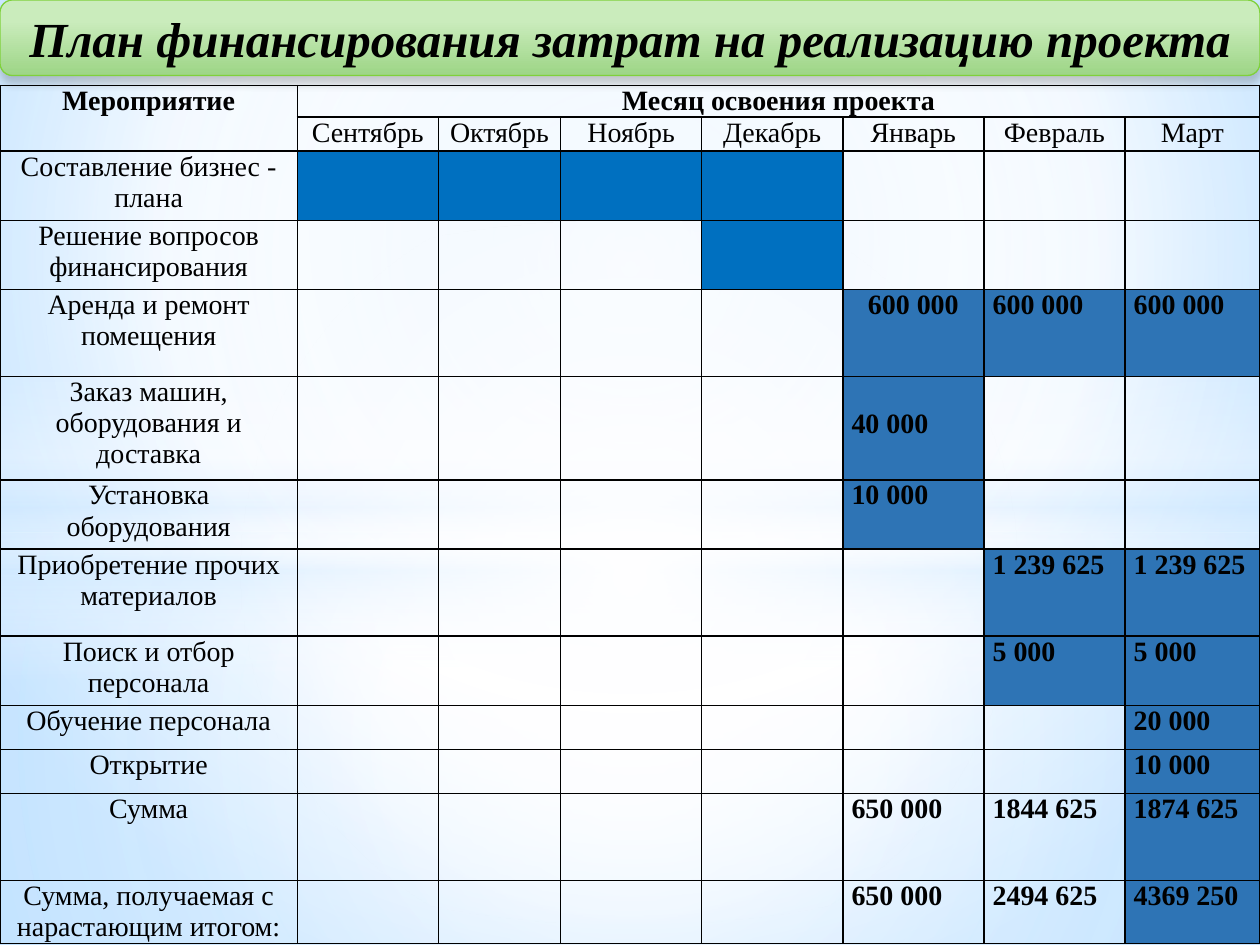
from lxml import etree
from pptx import Presentation
from pptx.dml.color import RGBColor
from pptx.enum.shapes import MSO_SHAPE as Shape
from pptx.enum.text import MSO_ANCHOR as Anchor, PP_ALIGN as Align
from pptx.oxml import parse_xml
from pptx.oxml.ns import nsdecls, qn
from pptx.util import Inches, Pt

FONT = "Times New Roman"
BLACK = RGBColor(0x00, 0x00, 0x00)
WHITE = RGBColor(0xFF, 0xFF, 0xFF)
PALE = RGBColor(0xD6, 0xEC, 0xFF)
SKY = RGBColor(0xC2, 0xE3, 0xFF)
AZURE = RGBColor(0x79, 0xC1, 0xFF)
LIME = RGBColor(0xCA, 0xEC, 0xBC)
GREEN = RGBColor(0x9D, 0xD5, 0x86)
EDGE = RGBColor(0x7F, 0xD1, 0x3B)
BLUE = RGBColor(0x00, 0x70, 0xC0)
STEEL = RGBColor(0x2E, 0x74, 0xB5)

COLS = [2.36, 1.12, 0.97, 1.12, 1.12, 1.12, 1.12, 1.07]
HEADS = [0.25, 0.27]
MONTHS = ["Сентябрь", "Октябрь", "Ноябрь", "Декабрь", "Январь", "Февраль", "Март"]
TASKS = [
    ("Составление бизнес - плана", 0.55, {}),
    ("Решение вопросов финансирования", 0.55, {}),
    ("Аренда и ремонт помещения", 0.69, {5: "600 000", 6: "600 000", 7: "600 000"}),
    ("Заказ машин, оборудования и доставка", 0.82, {5: "40 000"}),
    ("Установка оборудования", 0.55, {5: "10 000"}),
    ("Приобретение прочих материалов", 0.69, {6: "1 239 625", 7: "1 239 625"}),
    ("Поиск и отбор персонала", 0.55, {6: "5 000", 7: "5 000"}),
    ("Обучение персонала", 0.35, {7: "20 000"}),
    ("Открытие", 0.35, {7: "10 000"}),
    ("Сумма", 0.69, {5: "650 000", 6: "1844 625", 7: "1874 625"}),
    ("Сумма, получаемая с нарастающим итогом:", 0.5,
     {5: "650 000", 6: "2494 625", 7: "4369 250"}),
]
PLANNED = {(2, 1), (2, 2), (2, 3), (2, 4), (3, 4)}
TOTALS = {"Сумма", "Сумма, получаемая с нарастающим итогом:"}


def blend(props, stops, focus=None):
    """Replace the solid fill in props by a radial or top-down gradient."""
    marks = "".join(
        f'<a:gs pos="{pos * 1000}"><a:srgbClr val="{color}">'
        f'<a:alpha val="{alpha * 1000}"/></a:srgbClr></a:gs>'
        for pos, color, alpha in stops)
    way = '<a:lin ang="5400000" scaled="0"/>'
    if focus:
        sides = " ".join(f'{s}="{v * 1000}"' for s, v in zip("ltrb", focus))
        way = f'<a:path path="circle"><a:fillToRect {sides}/></a:path>'
    grad = parse_xml(f'<a:gradFill {nsdecls("a")} rotWithShape="1">'
                     f'<a:gsLst>{marks}</a:gsLst>{way}</a:gradFill>')
    props.replace(props.find(qn("a:solidFill")), grad)


def add_form(slide, kind, box, stops, focus=None):
    """Add a gradient shape without line or shadow."""
    form = slide.shapes.add_shape(kind, *map(Inches, box))
    form.shadow.inherit = False
    form.fill.solid()
    form.line.fill.background()
    blend(form.element.spPr, stops, focus)
    return form


def add_backdrop(slide, wide, high):
    """Paint the sky background and its soft glows."""
    slide.background.fill.solid()
    blend(slide.element.find(".//" + qn("p:bgPr")),
          [(0, SKY, 100), (60, WHITE, 100), (100, AZURE, 100)], (20, 10, 20, 60))
    mid, hub = 4.23, (50, 50, 50, 50)
    add_form(slide, Shape.RECTANGLE, (0, mid, wide, high - mid),
             [(0, WHITE, 91), (37, WHITE, 76), (100, PALE, 79)], hub)
    add_form(slide, Shape.RECTANGLE, (0, 0, wide, mid),
             [(0, WHITE, 89), (48, WHITE, 62), (100, PALE, 79)], hub)
    add_form(slide, Shape.RECTANGLE, (0, 2.9, wide, 2.5),
             [(0, WHITE, 0), (29, WHITE, 30), (45, PALE, 40),
              (55, WHITE, 26), (65, PALE, 60), (100, WHITE, 0)])
    add_form(slide, Shape.OVAL, (0, 1.75, wide, 5.58),
             [(0, WHITE, 100), (54, WHITE, 0)], hub)


def style(para, size, bold, align):
    """Format a paragraph and its runs."""
    para.alignment = align
    for run in para.runs:
        run.font.name = FONT
        run.font.size = Pt(size)
        run.font.bold = bold
        run.font.color.rgb = BLACK


def add_title(slide, box):
    """Add the green title banner."""
    banner = add_form(slide, Shape.ROUNDED_RECTANGLE, box,
                      [(28, LIME, 100), (100, GREEN, 100)])
    banner.line.color.rgb = EDGE
    banner.line.width = Pt(0.75)
    shade = etree.SubElement(banner.element.spPr.find(qn("a:effectLst")),
                             qn("a:outerShdw"), blurRad=str(Pt(5)),
                             dist=str(Pt(4)), dir="5400000", rotWithShape="0")
    tint = etree.SubElement(shade, qn("a:srgbClr"), val=str(BLACK))
    etree.SubElement(tint, qn("a:alpha"), val="20000")
    frame = banner.text_frame
    frame.text = "План финансирования затрат на реализацию проекта"
    frame.word_wrap = True
    frame.vertical_anchor = Anchor.MIDDLE
    style(frame.paragraphs[0], 28, True, Align.CENTER)
    frame.paragraphs[0].runs[0].font.italic = True


def outline(cell):
    """Draw black borders on all sides of a cell."""
    props = cell._tc.get_or_add_tcPr()
    for spot, side in enumerate("LRTB"):
        props.insert(spot, parse_xml(
            f'<a:ln{side} {nsdecls("a")} w="{Pt(1)}"><a:solidFill>'
            f'<a:srgbClr val="{BLACK}"/></a:solidFill></a:ln{side}>'))


def put(cell, text, bold=False, align=Align.CENTER):
    """Write formatted text into a cell."""
    cell.text_frame.text = text
    style(cell.text_frame.paragraphs[0], 16, bold, align)


def add_plan(slide, left, top):
    """Add the table of costs by task and month."""
    highs = HEADS + [high for _, high, _ in TASKS]
    grid = slide.shapes.add_table(
        len(highs), len(COLS), Inches(left), Inches(top),
        Inches(sum(COLS)), Inches(sum(highs))).table
    grid.first_row = grid.horz_banding = False
    for col, wide in zip(grid.columns, COLS):
        col.width = Inches(wide)
    for row, high in zip(grid.rows, highs):
        row.height = Inches(high)
    for cell in grid.iter_cells():
        cell.margin_left = cell.margin_right = Inches(0.07)
        cell.margin_top = cell.margin_bottom = 0
        cell.fill.background()
        outline(cell)
    grid.cell(0, 0).merge(grid.cell(1, 0))
    grid.cell(0, 1).merge(grid.cell(0, 7))
    put(grid.cell(0, 0), "Мероприятие", True)
    put(grid.cell(0, 1), "Месяц освоения проекта", True)
    for col, month in enumerate(MONTHS, 1):
        put(grid.cell(1, col), month)
    for row, (task, _, costs) in enumerate(TASKS, len(HEADS)):
        put(grid.cell(row, 0), task)
        for col, cost in costs.items():
            cell = grid.cell(row, col)
            put(cell, cost, True, Align.LEFT)
            if task not in TOTALS or col == 7:
                cell.fill.solid()
                cell.fill.fore_color.rgb = STEEL
    for row, col in PLANNED:
        fill = grid.cell(row, col).fill
        fill.solid()
        fill.fore_color.rgb = BLUE
    grid.cell(4, 5).text_frame.paragraphs[0].alignment = Align.CENTER
    grid.cell(5, 5).margin_top = Inches(0.25)


def main():
    """Build and save the financing plan slide."""
    deck = Presentation()
    deck.slide_width, deck.slide_height = Inches(10), Inches(7.5)
    slide = deck.slides.add_slide(deck.slide_layouts[6])
    add_backdrop(slide, 10, 7.5)
    add_title(slide, (0, 0, 10, 0.6))
    add_plan(slide, 0, 0.68)
    deck.save("out.pptx")


if __name__ == "__main__":
    main()
